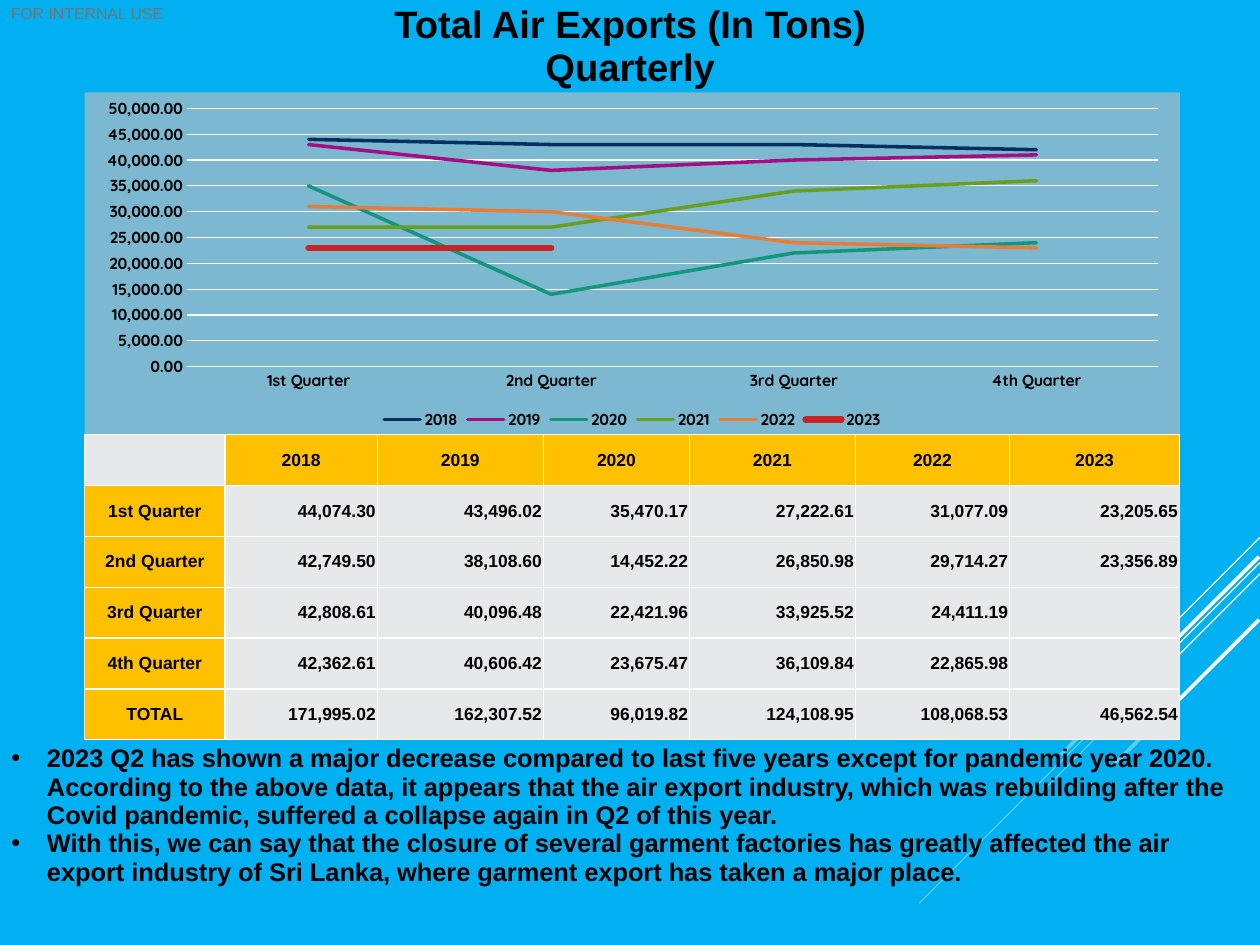
from dataclasses import dataclass

from pptx import Presentation
from pptx import util as u
from pptx.chart.data import CategoryChartData
from pptx.dml.color import RGBColor
from pptx.enum import chart as ch, shapes, text
from pptx.oxml import ns, parse_xml

HUE = {"sky": "00B0F0", "white": "FFFFFF", "black": "000000", "grey": "747474",
       "gold": "FFC000", "pale": "E7E8EA", "panel": "BFBFBF"}
FACE, PLOT = "Arial", "Quicksand"
MID, END = text.PP_ALIGN.CENTER, text.PP_ALIGN.RIGHT


@dataclass
class Ray:
    """A diagonal that falls to the left from (x, y)."""
    x: float
    y: float
    run: float
    width: float


@dataclass
class Year:
    name: str
    hue: str
    tons: list
    width: float = 2.25


RAYS = [Ray(27.99, 11.94, 2.31, 0.75), Ray(27.99, 12.5, 7.57, 0.75),
        Ray(27.99, 12.75, 4.8, 0.75), Ray(27.97, 12.37, 4.4, 2.25),
        Ray(27.97, 13.77, 3.2, 2.25)]

TERMS = ["1st Quarter", "2nd Quarter", "3rd Quarter", "4th Quarter"]
YEARS = [
    Year("2018", "052F61", [44074.30, 42749.50, 42808.61, 42362.61]),
    Year("2019", "A50E82", [43496.02, 38108.60, 40096.48, 40606.42]),
    Year("2020", "14967C", [35470.17, 14452.22, 22421.96, 23675.47]),
    Year("2021", "6A9E1F", [27222.61, 26850.98, 33925.52, 36109.84]),
    Year("2022", "E87D37", [31077.09, 29714.27, 24411.19, 22865.98]),
    Year("2023", "C62324", [23205.65, 23356.89, None, None], 4),
]
NOTES = [
    "2023 Q2 has shown a major decrease compared to last five years except for "
    "pandemic year 2020. According to the above data, it appears that the air "
    "export industry, which was rebuilding after the Covid pandemic, suffered a "
    "collapse again in Q2 of this year.",
    "With this, we can say that the closure of several garment factories has "
    "greatly affected the air export industry of Sri Lanka, where garment export "
    "has taken a major place.",
]


def rgb(hue: str) -> RGBColor:
    return RGBColor.from_string(HUE.get(hue, hue))


def xml(tag: str, body: str = "", attrs: str = ""):
    return parse_xml(f'<{tag} {ns.nsdecls("a", "c")} {attrs}>{body}</{tag}>')


def solid(hue: str, alpha: int = 100) -> str:
    return (f'<a:solidFill><a:srgbClr val="{HUE[hue]}">'
            f'<a:alpha val="{alpha * 1000}"/></a:srgbClr></a:solidFill>')


def place(shape, x: float, y: float, w: float, h: float) -> None:
    shape.left, shape.top, shape.width, shape.height = map(u.Cm, (x, y, w, h))


def pad(item, left: float, top: float, right: float, bottom: float) -> None:
    item.margin_left, item.margin_top = u.Cm(left), u.Cm(top)
    item.margin_right, item.margin_bottom = u.Cm(right), u.Cm(bottom)


def write(frame, lines: list, size: float, hue: str = "black",
          bold: bool = True, align=None) -> None:
    for i, line in enumerate(lines):
        para = frame.add_paragraph() if i else frame.paragraphs[0]
        para.alignment, para.line_spacing = align, 0.93
        para.space_before = u.Pt(0)
        run = para.add_run()
        run.text = line
        run.font.name, run.font.size = FACE, u.Pt(size)
        run.font.bold, run.font.color.rgb = bold, rgb(hue)


def set_font(font, hue: str = "black") -> None:
    font.name, font.size, font.bold = PLOT, u.Pt(10), True
    font.color.rgb = rgb(hue)


def draw_rays(slide) -> None:
    tree = slide.shapes.element
    for i, ray in enumerate(RAYS):
        line = slide.shapes.add_connector(
            shapes.MSO_CONNECTOR.STRAIGHT, u.Cm(ray.x), u.Cm(ray.y),
            u.Cm(ray.x - ray.run), u.Cm(ray.y + ray.run))
        line.line.color.rgb, line.line.width = rgb("white"), u.Pt(ray.width)
        line.element.spPr.append(xml("a:effectLst"))
        tree.insert(2 + i, line.element)  # behind the placeholders


def draw_label(slide) -> None:
    box = slide.shapes.add_textbox(0, 0, u.Cm(3.86), u.Cm(0.62))
    frame = box.text_frame
    frame.word_wrap, frame.vertical_anchor = True, text.MSO_ANCHOR.MIDDLE
    pad(frame, 0.24, 0, 0, 0)
    write(frame, ["FOR INTERNAL USE"], 10, "grey", False)


def draw_title(slide) -> None:
    title = slide.shapes.title
    place(title, 1.4, 0, 25.2, 2.03)
    frame = title.text_frame
    frame.auto_size = text.MSO_AUTO_SIZE.NONE
    frame.vertical_anchor = text.MSO_ANCHOR.MIDDLE
    pad(frame, 0, 0.08, 0, 0)
    write(frame, ["Total Air Exports (In Tons)", "Quarterly"], 24, align=MID)


def draw_notes(slide) -> None:
    body = slide.placeholders[1]
    place(body, 0, 16.43, 27.99, 4.57)
    body.fill.solid()
    body.fill.fore_color.rgb = rgb("sky")
    tint = body.element.spPr.find(".//" + ns.qn("a:srgbClr"))
    tint.append(xml("a:alpha", attrs='val="63000"'))
    frame = body.text_frame
    frame.auto_size = text.MSO_AUTO_SIZE.NONE
    frame.vertical_anchor = text.MSO_ANCHOR.TOP
    write(frame, NOTES, 16)
    for para in frame.paragraphs:
        props = para._p.get_or_add_pPr()
        props.set("marL", str(u.Cm(0.79)))
        props.set("indent", str(u.Cm(-0.79)))
        props.append(xml("a:buClr", f'<a:srgbClr val="{HUE["black"]}"/>'))
        props.append(xml("a:buFont", attrs=f'typeface="{FACE}"'))
        props.append(xml("a:buChar", attrs='char="•"'))


def draw_table(slide) -> None:
    sums = [sum(t or 0 for t in year.tons) for year in YEARS]
    rows = [[year.tons[i] for year in YEARS] for i in range(len(TERMS))] + [sums]
    grid = [[""] + [year.name for year in YEARS]]
    for term, row in zip(TERMS + ["TOTAL"], rows):
        grid.append([term] + [f"{t:,.2f}" if t else "" for t in row])

    wides = [3.12, 3.38, 3.69, 3.25, 3.68, 3.43, 3.77]
    table = slide.shapes.add_table(
        len(grid), len(wides), u.Cm(1.88), u.Cm(9.66),
        u.Cm(sum(wides)), u.Cm(6.78)).table
    table.first_row = table.horz_banding = False
    for col, wide in zip(table.columns, wides):
        col.width = u.Cm(wide)
    for r, row in enumerate(grid):
        for c, word in enumerate(row):
            cell = table.cell(r, c)
            head = (r == 0) != (c == 0)
            for side in "LRTB":
                cell._tc.get_or_add_tcPr().append(
                    xml(f"a:ln{side}", solid("white"), 'w="12700"'))
            cell.fill.solid()
            cell.fill.fore_color.rgb = rgb("gold" if head else "pale")
            cell.vertical_anchor = text.MSO_ANCHOR.MIDDLE
            pad(cell, 0.03, 0.03, 0.03, 0)
            if word:
                write(cell.text_frame, [word], 11, align=MID if head else END)


def draw_chart(slide) -> None:
    wide, high = 24.33, 7.59
    data = CategoryChartData(number_format="#,##0.00")
    data.categories = TERMS
    for year in YEARS:
        data.add_series(year.name, [t and round(t, -3) for t in year.tons])
    chart = slide.shapes.add_chart(
        ch.XL_CHART_TYPE.LINE, u.Cm(1.88), u.Cm(2.05), u.Cm(wide), u.Cm(high),
        data).chart
    chart.has_title, chart.has_legend = False, True
    chart.legend.position = ch.XL_LEGEND_POSITION.BOTTOM
    chart.legend.include_in_layout = False
    set_font(chart.font, "white")
    set_font(chart.legend.font)

    # Axes
    cats, vals = chart.category_axis, chart.value_axis
    for axis in (cats, vals):
        axis.major_tick_mark = axis.minor_tick_mark = ch.XL_TICK_MARK.NONE
        set_font(axis.tick_labels.font)
    vals.minimum_scale, vals.maximum_scale, vals.major_unit = 0, 50000, 5000
    vals.tick_labels.number_format = "#,##0.00"
    vals.tick_labels.number_format_is_linked = False
    vals.format.line.fill.background()
    for line in (cats.format.line, vals.major_gridlines.format.line):
        line.color.rgb, line.width = rgb("white"), u.Pt(0.75)

    # Series
    chart.plots[0].vary_by_categories = False
    for ser, year in zip(chart.plots[0].series, YEARS):
        ser.smooth = False
        ser.marker.style = ch.XL_MARKER_STYLE.NONE
        ser.format.line.color.rgb = rgb(year.hue)
        ser.format.line.width = u.Pt(year.width)
    for line in chart.element.xpath(".//c:ser/c:spPr/a:ln"):
        line.set("cap", "rnd")

    # Panel fill and plot position
    root = chart.element.find(ns.qn("c:chart"))
    root.addnext(xml("c:spPr", solid("panel", 65) + "<a:ln><a:noFill/></a:ln>"))
    area = root.find(ns.qn("c:plotArea"))
    for old in area.findall(ns.qn("c:layout")):
        area.remove(old)
    spots = {"layoutTarget": "inner", "xMode": "edge", "yMode": "edge",
             "x": 2.28 / wide, "y": 0.36 / high,
             "w": 21.56 / wide, "h": 5.74 / high}
    inner = "".join(f'<c:{k} val="{v}"/>' for k, v in spots.items())
    area.insert(0, xml("c:layout", f"<c:manualLayout>{inner}</c:manualLayout>"))


def main() -> None:
    deck = Presentation()
    deck.slide_width, deck.slide_height = u.Cm(27.99), u.Cm(21)
    slide = deck.slides.add_slide(deck.slide_layouts[1])
    slide.background.fill.solid()
    slide.background.fill.fore_color.rgb = rgb("sky")
    for draw in (draw_rays, draw_label, draw_title, draw_notes, draw_table,
                 draw_chart):
        draw(slide)
    deck.save("out.pptx")


if __name__ == "__main__":
    main()
